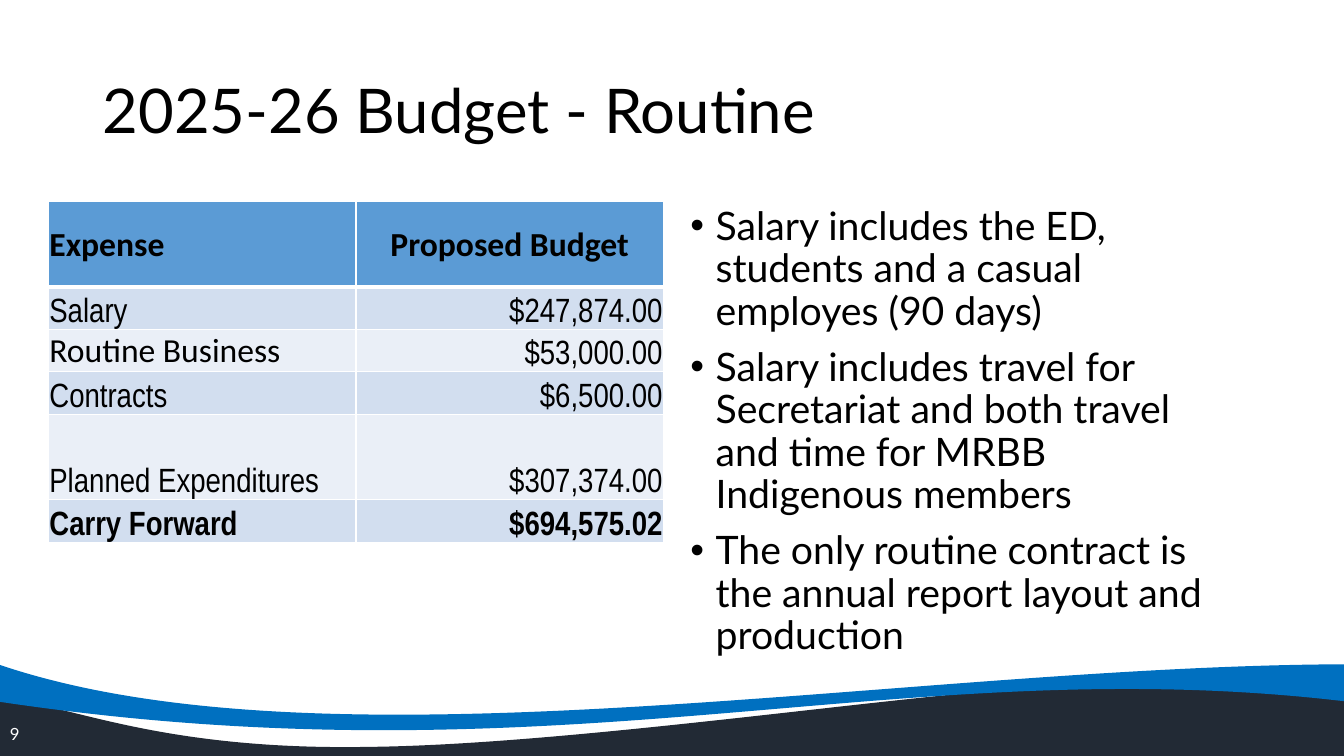
from lxml import etree
from pptx import Presentation
from pptx.dml.color import RGBColor
from pptx.enum import text as t
from pptx.oxml import ns
from pptx.util import Inches, Pt

BLACK = RGBColor(0, 0, 0)
WHITE = RGBColor(255, 255, 255)
NAVY = RGBColor(0x22, 0x2A, 0x35)
BLUE = RGBColor(0x00, 0x70, 0xC0)
HEADER_BLUE = RGBColor(0x5B, 0x9B, 0xD5)
BAND_DARK = RGBColor(0xD2, 0xDE, 0xEF)
BAND_LIGHT = RGBColor(0xEA, 0xEF, 0xF7)

deck = Presentation()
deck.slide_width = Inches(13.33)
deck.slide_height = Inches(7.5)
slide = deck.slides.add_slide(deck.slide_layouts[6])

dark_wave = [
    ("moveTo", [(-0.02, 6.95)]),
    ("cubicBezTo", [(0.57, 6.92), (1.43, 7.45), (3.66, 7.41)]),
    ("cubicBezTo", [(5.47, 7.39), (8.26, 6.99), (9.88, 6.85)]),
    ("cubicBezTo", [(11.5, 6.71), (13.51, 6.48), (13.37, 6.67)]),
    ("cubicBezTo", [(13.36, 6.95), (13.36, 7.22), (13.36, 7.5)]),
    ("lnTo", [(-0.01, 7.5)]),
    ("cubicBezTo", [(-0.01, 7.32), (-0.02, 7.13), (-0.02, 6.95)]),
    ("close", []),
]
blue_wave = [
    ("moveTo", [(-0.02, 6.59)]),
    ("cubicBezTo", [(3.26, 7.71), (8.98, 6.6), (13.36, 6.59)]),
    ("lnTo", [(13.36, 6.96)]),
    ("cubicBezTo", [(8.91, 6.43), (5.66, 7.81), (-0.02, 6.96)]),
    ("lnTo", [(-0.02, 6.59)]),
    ("close", []),
]
waves = [
    (dark_wave, NAVY, -0.02, 6.6, 13.37, 7.5),
    (blue_wave, BLUE, -0.02, 6.59, 13.37, 7.24),
]
UNITS = 1000
for segments, color, left, top, right, bottom in waves:
    corners = [(left, top), (right, top), (right, bottom), (left, bottom)]
    corners = [(round(x * UNITS), round(y * UNITS)) for x, y in corners]
    builder = slide.shapes.build_freeform(*corners[0], scale=Inches(1) / UNITS)
    builder.add_line_segments(corners[1:], close=True)
    wave = builder.convert_to_shape()
    outline = next(wave._element.iter(ns.qn("a:path")))
    for edge in list(outline):
        outline.remove(edge)
    for command, points in segments:
        curve = etree.SubElement(outline, ns.qn(f"a:{command}"))
        for x, y in points:
            etree.SubElement(curve, ns.qn("a:pt"),
                             x=str(round((x - left) * UNITS)), y=str(round((y - top) * UNITS)))
    wave.shadow.inherit = False
    wave.fill.solid()
    wave.fill.fore_color.rgb = color
    wave.line.fill.background()


def style(paragraph, font_name, size, color, bold=False):
    font = paragraph.font
    font.name, font.size, font.bold = font_name, Pt(size), bold
    font.color.rgb = color


def add_text(left, top, width, height, anchor):
    frame = slide.shapes.add_textbox(Inches(left), Inches(top), Inches(width), Inches(height)).text_frame
    frame.word_wrap = True
    frame.vertical_anchor = anchor
    return frame


title = add_text(0.92, 0.4, 11.5, 1.45, t.MSO_ANCHOR.MIDDLE)
title.text = "2025-26 Budget - Routine"
title.paragraphs[0].line_spacing = 0.9
style(title.paragraphs[0], "Lato", 44, BLACK)

notes = add_text(6.75, 2, 5.67, 4.76, t.MSO_ANCHOR.TOP)
notes.text = "\n".join([
    "Salary includes the ED, students and a casual employes (90 days)",
    "Salary includes travel for Secretariat and both travel and time for MRBB Indigenous members",
    "The only routine contract is the annual report layout and production",
])
for index, note in enumerate(notes.paragraphs):
    note.line_spacing = 0.9
    note.space_before = Pt(10 if index else 0)
    properties = note._p.get_or_add_pPr()
    properties.set("marL", str(Inches(0.25)))
    properties.set("indent", str(Inches(-0.25)))
    etree.SubElement(properties, ns.qn("a:buFont"), typeface="Arial")
    etree.SubElement(properties, ns.qn("a:buChar"), char="•")
    style(note, "Lato", 28, BLACK)

page_number = add_text(0, 7.08, 3, 0.4, t.MSO_ANCHOR.MIDDLE)
page_number.text = "9"
style(page_number.paragraphs[0], "Lato", 12, WHITE)

expenses = [
    ("Expense", "Proposed Budget", 0.85),
    ("Salary", "$247,874.00", 0.42),
    ("Routine Business", "$53,000.00", 0.42),
    ("Contracts", "$6,500.00", 0.42),
    ("Planned Expenditures", "$307,374.00", 0.85),
    ("Carry Forward", "$694,575.02", 0.42),
]
budget = slide.shapes.add_table(
    len(expenses), 2, Inches(0.48), Inches(2), Inches(6.1), Inches(3.38)).table
for row, (expense, amount, height) in enumerate(expenses):
    budget.rows[row].height = Inches(height)
    header = row == 0
    for column, content in enumerate((expense, amount)):
        cell = budget.cell(row, column)
        cell.text = content
        cell.margin_left = cell.margin_right = cell.margin_top = Inches(0.01)
        cell.margin_bottom = 0
        calibri = header or content == "Routine Business"
        cell.vertical_anchor = t.MSO_ANCHOR.MIDDLE if calibri else t.MSO_ANCHOR.BOTTOM
        line = cell.text_frame.paragraphs[0]
        if column:
            line.alignment = t.PP_ALIGN.CENTER if header else t.PP_ALIGN.RIGHT
        style(line, "Calibri" if calibri else "Arial Narrow", 24, BLACK,
              header or expense == "Carry Forward")
        for side in "LRTB" if header else "":
            border = etree.SubElement(cell._tc.get_or_add_tcPr(), ns.qn(f"a:ln{side}"),
                                      w=str(Pt(3 if side == "B" else 1)))
            paint = etree.SubElement(border, ns.qn("a:solidFill"))
            etree.SubElement(paint, ns.qn("a:srgbClr"), val=str(WHITE))
        cell.fill.solid()
        cell.fill.fore_color.rgb = HEADER_BLUE if header else BAND_DARK if row % 2 else BAND_LIGHT

deck.save("out.pptx")
